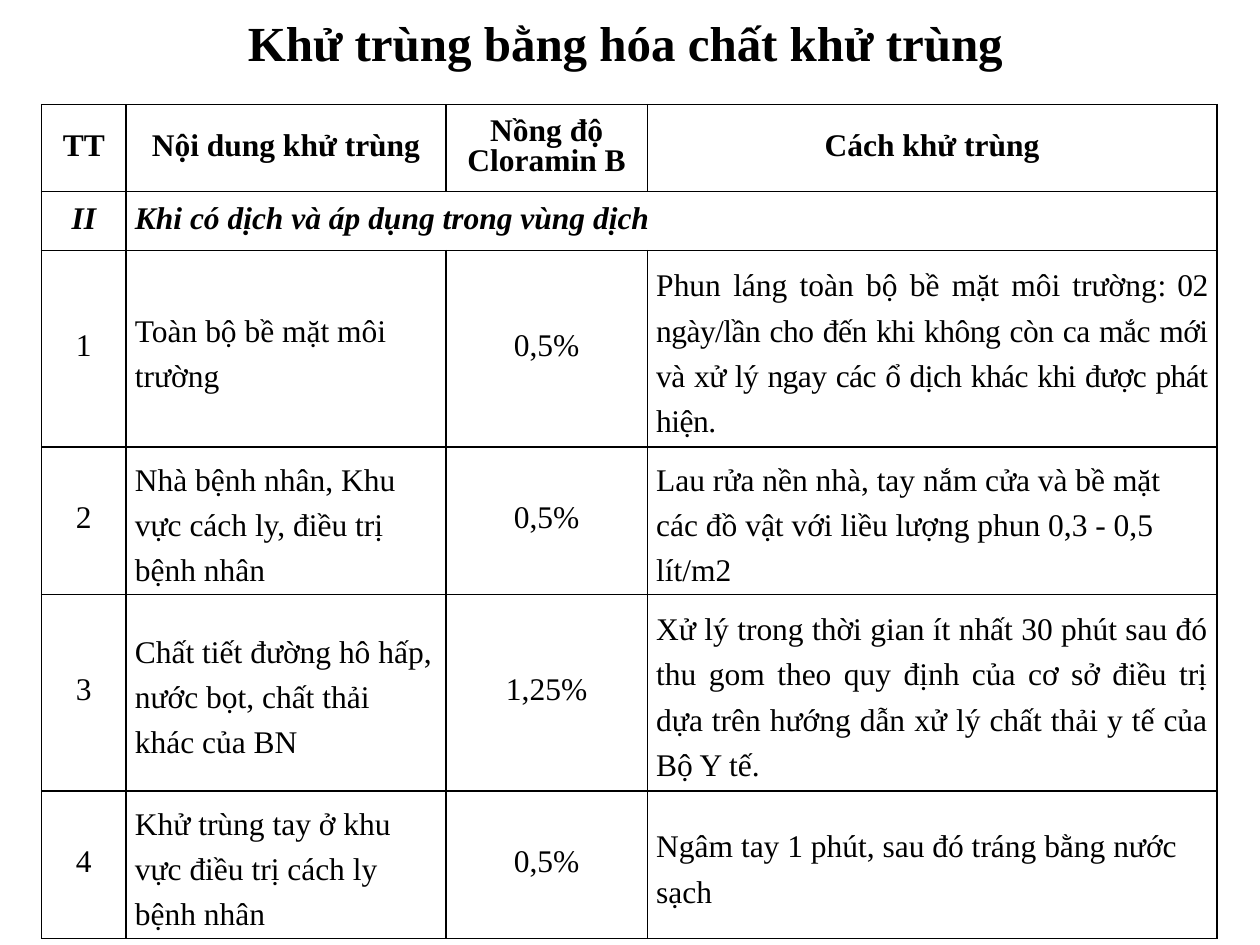
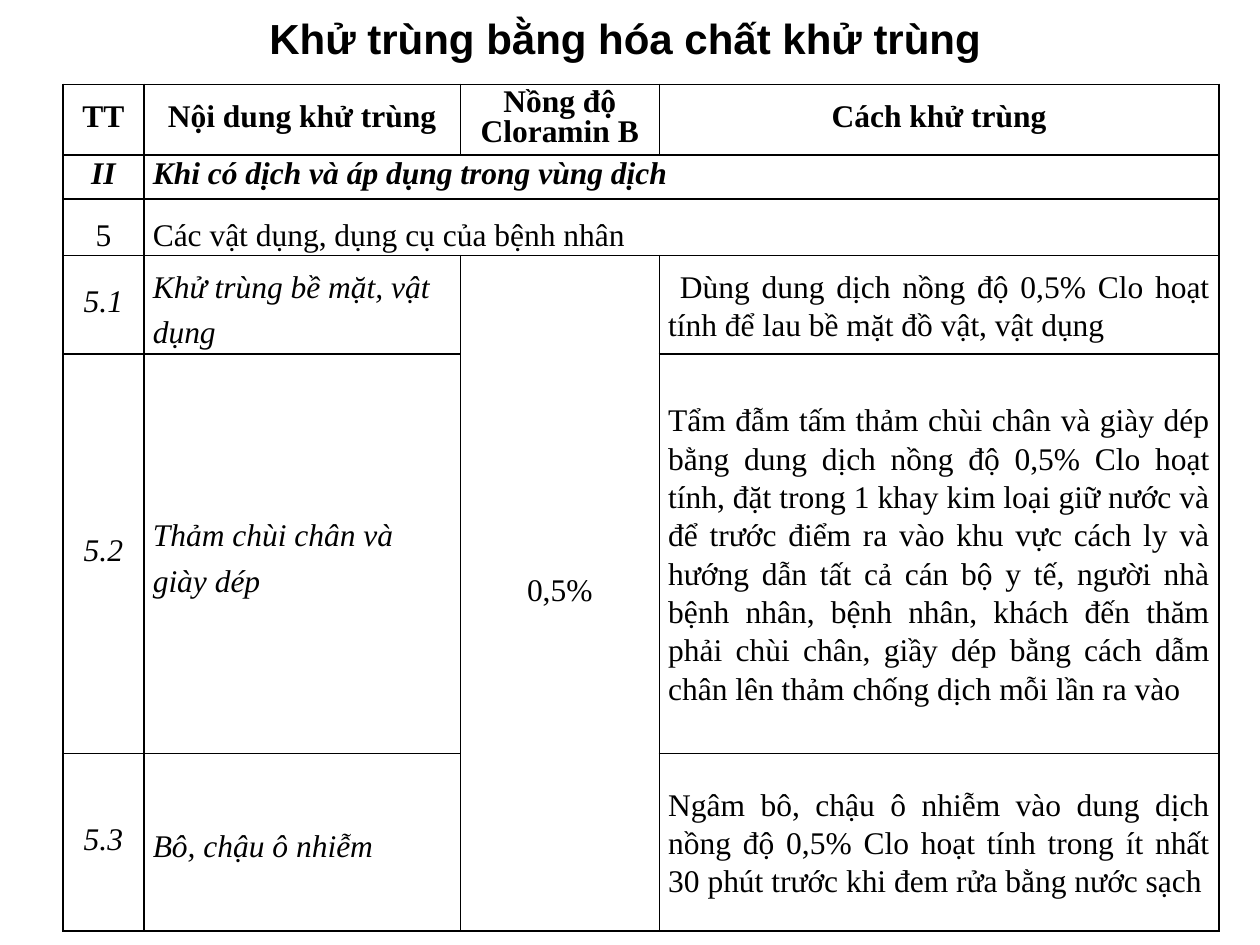
from dataclasses import dataclass, field

from lxml.etree import SubElement
from pptx import Presentation
from pptx.dml.color import RGBColor
from pptx.enum.text import MSO_ANCHOR as Anchor, MSO_AUTO_SIZE as AutoSize, PP_ALIGN as Align
from pptx.oxml.ns import qn
from pptx.util import Cm, Pt

# Shared look
BLACK = "000000"
SERIF = "Times New Roman"
SANS = "Arial"
TITLE = "Khử trùng bằng hóa chất khử trùng"
SECTION = "Khi có dịch và áp dụng trong vùng dịch"
LINE = Pt(17)
BORDER = Pt(1)

# Paragraph formats, by the role of the cell
HEAD = {"alignment": Align.CENTER, "line_spacing": LINE}
LEAD = {"alignment": Align.LEFT, "line_spacing": LINE}
BODY = {"alignment": Align.LEFT, "line_spacing": 1.3}
JUSTIFIED = {"alignment": Align.JUSTIFY, "line_spacing": 1.3}
DENSE = {"alignment": Align.JUSTIFY, "line_spacing": 1.1}
GAP = {"space_after": Pt(10)}

# Font formats
PLAIN = {"bold": False, "italic": False}
BOLD = {"bold": True, "italic": False}
ITALIC = {"bold": False, "italic": True}
BOLD_ITALIC = {"bold": True, "italic": True}


@dataclass
class Entry:
    text: str
    layout: dict
    style: dict = field(default_factory=lambda: PLAIN)
    tail: str = ""  # slightly condensed ending
    rows: int = 1
    columns: int = 1


@dataclass
class Sheet:
    title_font: str
    title_size: int
    title_height: float
    left: float
    top: float
    widths: list[float]
    heights: list[float]
    entries: list[list[Entry | None]]


def color(value: str) -> RGBColor:
    return RGBColor.from_string(value)


def apply(target, values: dict) -> None:
    for name, value in values.items():
        setattr(target, name, value)


def add_span(para, text: str, font: str, size: int, style: dict):
    span = para.add_run()
    span.text = text
    apply(span.font, {"name": font, "size": Pt(size), **style})
    span.font.color.rgb = color(BLACK)
    return span


def add_title(page, sheet: Sheet) -> None:
    box = page.shapes.add_textbox(Cm(0.64), Cm(0.13), Cm(23.93), Cm(sheet.title_height))
    apply(box.text_frame, {"word_wrap": True, "vertical_anchor": Anchor.MIDDLE,
                           "auto_size": AutoSize.SHAPE_TO_FIT_TEXT})
    para = box.text_frame.paragraphs[0]
    para.alignment = Align.CENTER
    add_span(para, TITLE, sheet.title_font, sheet.title_size, {"bold": True})


def frame_cell(cell) -> None:
    properties = cell._tc.get_or_add_tcPr()
    for side in ("lnL", "lnR", "lnT", "lnB"):
        edge = SubElement(properties, qn(f"a:{side}"), w=str(BORDER))
        fill = SubElement(edge, qn("a:solidFill"))
        SubElement(fill, qn("a:srgbClr"), val=BLACK)
    cell.fill.background()
    apply(cell, {"margin_left": Cm(0.18), "margin_right": Cm(0.18), "margin_top": 0,
                 "margin_bottom": 0, "vertical_anchor": Anchor.MIDDLE})


def fill_cell(cell, entry: Entry) -> None:
    para = cell.text_frame.paragraphs[0]
    apply(para, entry.layout)
    add_span(para, entry.text, SERIF, 18, entry.style)
    if entry.tail:
        span = add_span(para, entry.tail, SERIF, 18, entry.style)
        span._r.get_or_add_rPr().set("spc", "-30")


def add_grid(page, sheet: Sheet) -> None:
    frame = page.shapes.add_table(len(sheet.heights), len(sheet.widths), Cm(sheet.left), Cm(sheet.top),
                                  Cm(sum(sheet.widths)), Cm(sum(sheet.heights)))
    table = frame.table
    apply(table, {"first_row": False, "horz_banding": False})
    for column, width in zip(table.columns, sheet.widths):
        column.width = Cm(width)
    for row, height in zip(table.rows, sheet.heights):
        row.height = Cm(height)
    for cell in table.iter_cells():
        frame_cell(cell)
    for i, entries in enumerate(sheet.entries):
        for j, entry in enumerate(entries):
            if entry is None:
                continue
            cell = table.cell(i, j)
            if entry.rows > 1 or entry.columns > 1:
                cell.merge(table.cell(i + entry.rows - 1, j + entry.columns - 1))
            fill_cell(cell, entry)


# Rows that open both tables
OPENING = [
    [Entry(text, HEAD, BOLD)
     for text in ("TT", "Nội dung khử trùng", "Nồng độ Cloramin B", "Cách khử trùng")],
    [Entry("II", HEAD, BOLD_ITALIC), Entry(SECTION, LEAD, BOLD_ITALIC, columns=3)],
]

SHEETS = [
    Sheet(
        SERIF, 28, 1.45, 0.84, 2.11,
        [1.7, 6.45, 4.06, 11.48], [1.75, 1.19, 3.84, 2.87, 3.81, 2.87],
        OPENING + [
            [Entry("1", HEAD), Entry("Toàn bộ bề mặt môi trường", BODY | GAP),
             Entry("0,5%", HEAD | GAP),
             Entry("Phun láng toàn bộ bề mặt môi trường", JUSTIFIED,
                   tail=": 02 ngày/lần cho đến khi không còn ca mắc mới và xử lý ngay "
                        "các ổ dịch khác khi được phát hiện.")],
            [Entry("2", HEAD), Entry("Nhà bệnh nhân, Khu vực cách ly, điều trị bệnh nhân", BODY),
             Entry("0,5%", HEAD),
             Entry("Lau rửa nền nhà, tay nắm cửa và bề mặt các đồ vật với liều lượng "
                   "phun 0,3 - 0,5 lít/m2", BODY)],
            [Entry("3", HEAD),
             Entry("Chất tiết đường hô hấp, nước bọt, chất thải khác của BN", BODY),
             Entry("1,25%", HEAD),
             Entry("Xử lý trong thời gian ít nhất 30 phút sau đó thu gom theo quy định của "
                   "cơ sở điều trị dựa trên hướng dẫn xử lý chất thải y tế của Bộ Y tế.", JUSTIFIED)],
            [Entry("4", HEAD), Entry("Khử trùng tay ở khu vực điều trị cách ly bệnh nhân", BODY),
             Entry("0,5%", HEAD),
             Entry("Ngâm tay 1 phút, sau đó tráng bằng nước sạch", BODY)],
        ],
    ),
    Sheet(
        SANS, 24, 1.27, 1.27, 1.7,
        [1.63, 6.38, 4.01, 11.28], [1.42, 0.89, 1.12, 1.93, 8.05, 3.58],
        OPENING + [
            [Entry("5", HEAD | {"line_spacing": 1.5}),
             Entry("Các vật dụng, dụng cụ của bệnh nhân", BODY | {"line_spacing": 1.5}, columns=3)],
            [Entry("5.1", HEAD, ITALIC), Entry("Khử trùng bề mặt, vật dụng", BODY, ITALIC),
             Entry("0,5%", HEAD, rows=3),
             Entry(" Dùng dung dịch nồng độ 0,5% Clo hoạt tính để lau bề mặt đồ vật, vật dụng ", DENSE)],
            [Entry("5.2", HEAD, ITALIC), Entry("Thảm chùi chân và giày dép", BODY, ITALIC), None,
             Entry("Tẩm đẫm tấm thảm chùi chân và giày dép bằng dung dịch nồng độ 0,5% Clo hoạt "
                   "tính, đặt trong 1 khay kim loại giữ nước và để trước điểm ra vào khu vực cách "
                   "ly và hướng dẫn tất cả cán bộ y tế, người nhà bệnh nhân, bệnh nhân, khách đến "
                   "thăm phải chùi chân, giầy dép bằng cách dẫm chân lên thảm chống dịch mỗi lần "
                   "ra vào ", DENSE)],
            [Entry("5.3", HEAD, ITALIC), Entry("Bô, chậu ô nhiễm", BODY, ITALIC), None,
             Entry("Ngâm bô, chậu ô nhiễm vào dung dịch nồng độ 0,5% Clo hoạt tính trong ít nhất "
                   "30 phút trước khi đem rửa bằng nước sạch", DENSE)],
        ],
    ),
]


def main() -> None:
    deck = Presentation()
    apply(deck, {"slide_width": Cm(25.4), "slide_height": Cm(19.05)})
    for sheet in SHEETS:
        page = deck.slides.add_slide(deck.slide_layouts[6])
        add_title(page, sheet)
        add_grid(page, sheet)
    deck.save("out.pptx")


if __name__ == "__main__":
    main()
